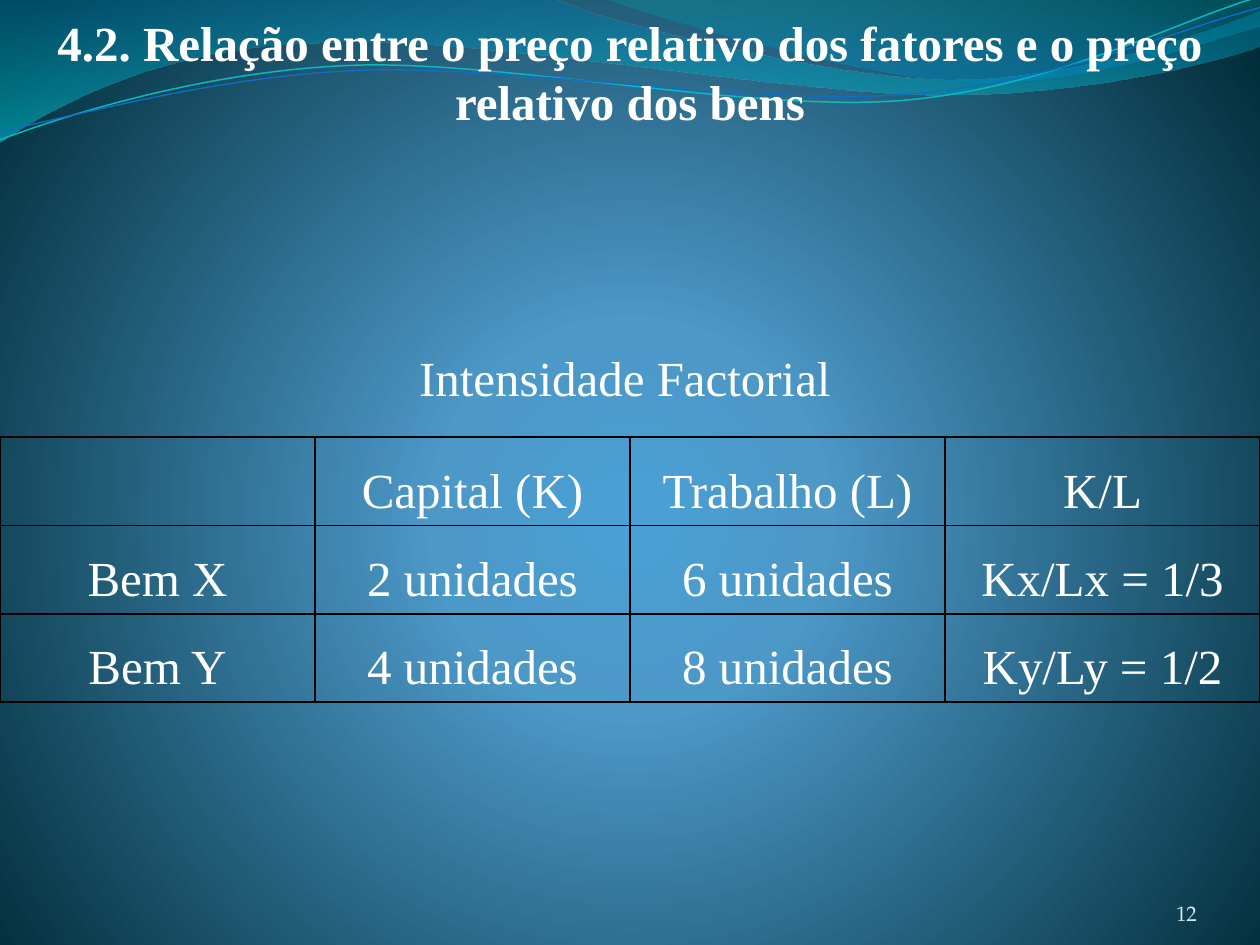
from dataclasses import dataclass
from typing import NamedTuple

from lxml import etree
from pptx import Presentation
from pptx.dml.color import RGBColor
from pptx.enum.text import MSO_ANCHOR, MSO_AUTO_SIZE, PP_ALIGN
from pptx.oxml.ns import qn
from pptx.util import Inches, Pt

CENTER, RIGHT = PP_ALIGN.CENTER, PP_ALIGN.RIGHT
TOP, MIDDLE, BOTTOM = MSO_ANCHOR.TOP, MSO_ANCHOR.MIDDLE, MSO_ANCHOR.BOTTOM
GROW = MSO_AUTO_SIZE.SHAPE_TO_FIT_TEXT
TITLE_ONLY = 5


@dataclass(frozen=True)
class Theme:
    white: str = "FFFFFF"
    number: str = "D1EAEE"
    border: str = "000000"
    teal_line: str = "0AB8BF"
    blue_line: str = "0F6FC6"
    serif: str = "Times New Roman"
    number_font: str = "TeX Gyre Pagella"
    body_size: int = 28
    number_size: int = 12
    border_width: float = 1


class Stop(NamedTuple):
    position: int
    color: str
    alpha: int = 100


class Wave(NamedTuple):
    points: list
    stops: list


class Strand(NamedTuple):
    points: list
    color: str
    width: float


THEME = Theme()

BACKGROUND = [Stop(0, "4AA0D6"), Stop(25, "4C98C7"), Stop(100, "002C38")]
WAVES = [
    Wave(
        [(0, 0), (4.4, -0.01),
         (4.76, 0.17, 6.64, 0.63, 7.58, 0.63), (8.53, 0.63, 9.58, 0.26, 10, 0.09),
         (10.01, 0.36),
         (9.83, 0.44, 8.7, 0.76, 7.46, 0.75), (6.22, 0.75, 3.82, 0.28, 2.57, 0.34),
         (1.29, 0.36, 0.46, 0.83, -0.01, 1.13)],
        [Stop(0, "0074A1", 45), Stop(100, "00C6CF", 55)],
    ),
    Wave(
        [(4.79, -0.01),
         (5.09, 0.11, 6.82, 0.62, 7.69, 0.65), (8.56, 0.69, 9.61, 0.32, 10, 0.21),
         (10, 0)],
        [Stop(0, "00A1A9", 30), Stop(80, "008BBF", 45)],
    ),
]
STRANDS = [
    Strand(
        [(0, 1.11), (0.48, 0.93, 1.58, 0.57, 2.77, 0.52),
         (3.95, 0.47, 5.93, 0.89, 7.13, 0.8), (8.33, 0.71, 9.38, 0.15, 9.98, -0.02)],
        THEME.teal_line, 0.85,
    ),
    Strand(
        [(0, 1.04), (0.47, 0.96, 1.64, 0.61, 2.83, 0.56),
         (4.03, 0.51, 5.97, 0.84, 7.17, 0.75), (8.36, 0.67, 9.41, 0.21, 10, 0.06)],
        THEME.blue_line, 0.75,
    ),
]
ROWS = [
    ["", "Capital (K)", "Trabalho (L)", "K/L"],
    ["Bem X", "2 unidades", "6 unidades", "Kx/Lx = 1/3"],
    ["Bem Y", "4 unidades", "8 unidades", "Ky/Ly = 1/2"],
]


def set_gradient(fill, gradient, stops: list[Stop]) -> None:
    fill.gradient()
    for child in list(gradient()):
        gradient().remove(child)
    stop_list = etree.SubElement(gradient(), qn("a:gsLst"))
    for stop in stops:
        entry = etree.SubElement(stop_list, qn("a:gs"), pos=str(stop.position * 1000))
        color = etree.SubElement(entry, qn("a:srgbClr"), val=stop.color)
        if stop.alpha < 100:
            etree.SubElement(color, qn("a:alpha"), val=str(stop.alpha * 1000))


def paint_background(slide) -> None:
    def gradient():
        return next(slide.element.iter(qn("a:gradFill")))

    set_gradient(slide.background.fill, gradient, BACKGROUND)
    path = etree.SubElement(gradient(), qn("a:path"), path="circle")
    etree.SubElement(path, qn("a:fillToRect"), l="10000", t="110000", r="10000", b="100000")


def add_outline(slide, points: list, close: bool):
    start, *segments = points
    builder = slide.shapes.build_freeform(*map(Inches, start))
    ends = [tuple(map(Inches, segment[-2:])) for segment in segments]
    builder.add_line_segments(ends, close=close)
    shape = builder.convert_to_shape()
    shape.shadow.inherit = False
    lines = list(shape.element.iter(qn("a:lnTo")))
    for line, segment in zip(lines, segments):
        if len(segment) == 6:
            bend(line, segment, shape.left, shape.top)
    return shape


def bend(line, segment: tuple, left: int, top: int) -> None:
    curve = etree.Element(qn("a:cubicBezTo"))
    for x, y in zip(segment[::2], segment[1::2]):
        etree.SubElement(curve, qn("a:pt"), x=str(Inches(x) - left), y=str(Inches(y) - top))
    line.getparent().replace(line, curve)


def add_wave(slide, wave: Wave) -> None:
    shape = add_outline(slide, wave.points, True)
    shape.line.fill.background()

    def gradient():
        return shape.element.spPr.find(qn("a:gradFill"))

    set_gradient(shape.fill, gradient, wave.stops)
    etree.SubElement(gradient(), qn("a:lin"), ang="5400000", scaled="0")


def add_strand(slide, strand: Strand) -> None:
    shape = add_outline(slide, strand.points, False)
    shape.fill.background()
    shape.line.color.rgb = RGBColor.from_string(strand.color)
    shape.line.width = Pt(strand.width)


def write(text_frame, text: str, alignment=CENTER, font: str = THEME.serif,
          size: int = THEME.body_size, color: str = THEME.white, bold: bool = False):
    text_frame.text = text
    text_frame.word_wrap = True
    paragraph = text_frame.paragraphs[0]
    paragraph.alignment = alignment
    for run in paragraph.runs:
        run.font.name = font
        run.font.size = Pt(size)
        run.font.bold = bold
        run.font.color.rgb = RGBColor.from_string(color)
    return paragraph


def add_title(slide, text: str) -> None:
    title = slide.shapes.title
    title.left, title.top, title.width, title.height = map(Inches, (0, 0.05, 10, 1.04))
    write(title.text_frame, text, bold=True)
    title.text_frame.vertical_anchor = TOP
    title.text_frame.auto_size = GROW
    title.element.getparent().append(title.element)


def add_caption(slide, text: str) -> None:
    box = slide.shapes.add_textbox(*map(Inches, (-0.04, 2.71, 10, 0.57)))
    write(box.text_frame, text)
    box.text_frame.vertical_anchor = MIDDLE
    box.text_frame.auto_size = GROW


def add_page_number(slide, text: str) -> None:
    box = slide.shapes.add_textbox(*map(Inches, (8.67, 6.95, 0.83, 0.4)))
    frame = box.text_frame
    frame.margin_left = frame.margin_right = frame.margin_top = frame.margin_bottom = 0
    frame.vertical_anchor = BOTTOM
    write(frame, text, RIGHT, THEME.number_font, THEME.number_size, THEME.number)


def format_cell(cell, text: str) -> None:
    cell.margin_left = cell.margin_right = Inches(0.07)
    cell.margin_top = cell.margin_bottom = 0
    paragraph = write(cell.text_frame, text)
    paragraph.line_spacing = 1.5
    paragraph.space_after = Pt(6)
    properties = cell._tc.get_or_add_tcPr()
    for side in ("lnL", "lnR", "lnT", "lnB"):
        line = etree.SubElement(properties, qn(f"a:{side}"), w=str(Pt(THEME.border_width)))
        solid = etree.SubElement(line, qn("a:solidFill"))
        etree.SubElement(solid, qn("a:srgbClr"), val=THEME.border)
    cell.fill.background()


def add_intensity_table(slide) -> None:
    frame = slide.shapes.add_table(len(ROWS), len(ROWS[0]), *map(Inches, (0, 3.47, 10, 2.1)))
    frame.table.first_row = frame.table.horz_banding = False
    for row, texts in enumerate(ROWS):
        for column, text in enumerate(texts):
            format_cell(frame.table.cell(row, column), text)


def main() -> None:
    presentation = Presentation()
    presentation.slide_width, presentation.slide_height = Inches(10), Inches(7.5)
    slide = presentation.slides.add_slide(presentation.slide_layouts[TITLE_ONLY])
    paint_background(slide)
    for wave in WAVES:
        add_wave(slide, wave)
    for strand in STRANDS:
        add_strand(slide, strand)
    add_title(slide, "4.2. Relação entre o preço relativo dos fatores e o preço relativo dos bens")
    add_caption(slide, "Intensidade Factorial")
    add_page_number(slide, "12")
    add_intensity_table(slide)
    presentation.save("out.pptx")


if __name__ == "__main__":
    main()
